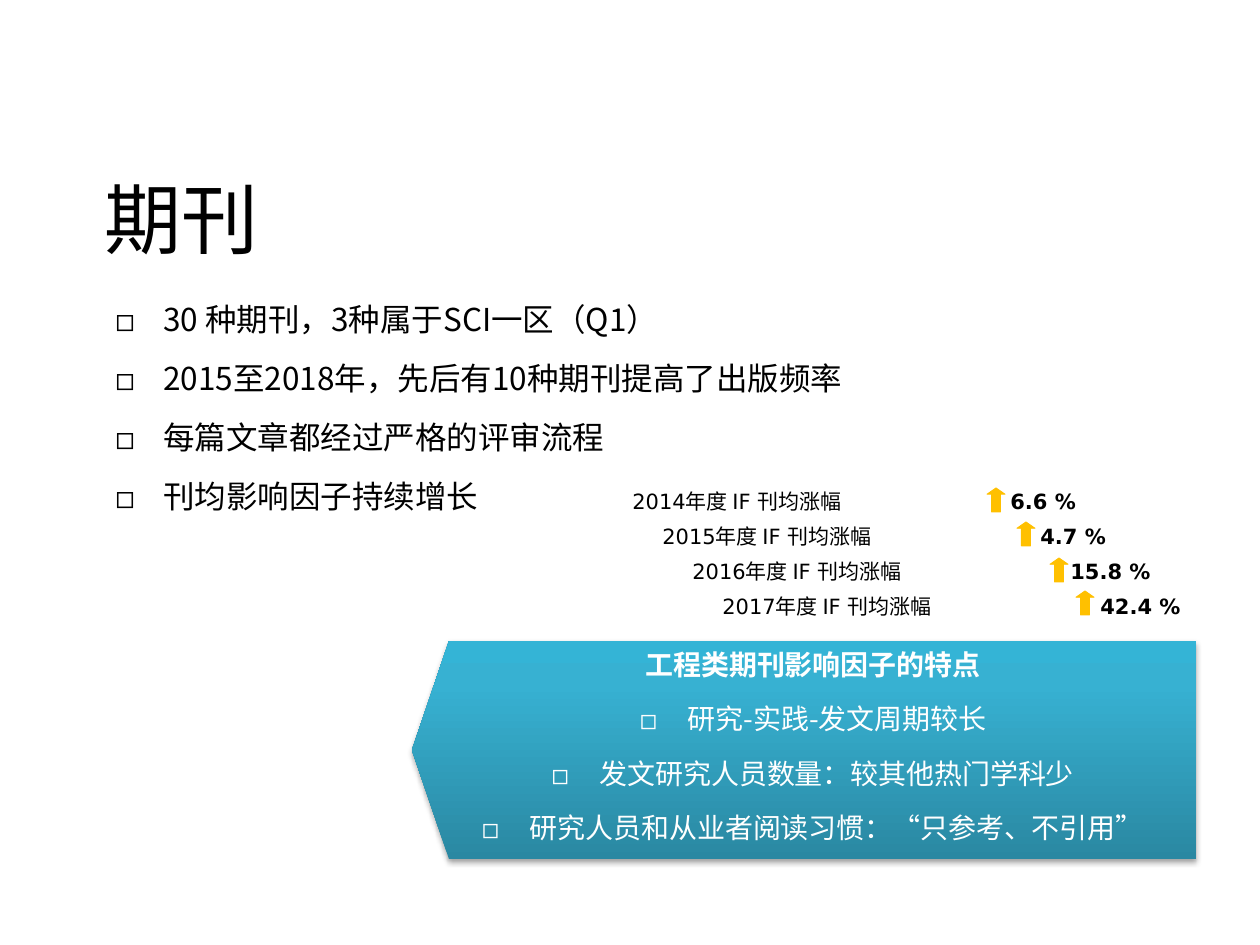
from lxml import etree
from pptx import Presentation
from pptx.dml.color import RGBColor
from pptx.enum.shapes import MSO_SHAPE
from pptx.enum.text import MSO_ANCHOR, PP_ALIGN
from pptx.oxml import parse_xml
from pptx.oxml.ns import qn
from pptx.util import Emu, Pt

PX = 914400 / 126
ARROW = MSO_SHAPE.UP_ARROW
PENTAGON = MSO_SHAPE.PENTAGON
MIDDLE = MSO_ANCHOR.MIDDLE
TOP = MSO_ANCHOR.TOP
CENTER = PP_ALIGN.CENTER
LEFT = PP_ALIGN.LEFT
DRAWING = "http://schemas.openxmlformats.org/drawingml/2006/main"
CHINESE = "Noto Sans CJK SC"
DIGITS = "DejaVu Sans"
COLORS = {
    "text": "000000",
    "light": "FFFFFF",
    "arrow": "FFC000",
    "deep": "2A88A2",
    "mid": "37B1D2",
    "bright": "34B4D6",
}

JOURNAL_FACTS = [
    "30 种期刊，3种属于SCI一区（Q1）",
    "2015至2018年，先后有10种期刊提高了出版频率",
    "每篇文章都经过严格的评审流程",
    "刊均影响因子持续增长",
]
GROWTH = [
    ("2014", "6.6 %", (367, 6)),
    ("2015", "4.7 %", (367, 5)),
    ("2016", "15.8 %", (370, 6)),
    ("2017", "42.4 %", (366, 4)),
]
GROWTH_TABS = (252, 378)
TRAITS_TITLE = "工程类期刊影响因子的特点"
TRAITS = [
    "研究-实践-发文周期较长",
    "发文研究人员数量：较其他热门学科少",
    "研究人员和从业者阅读习惯：“只参考、不引用”",
]


def px(*lengths):
    return [Emu(round(length * PX)) for length in lengths]


def color(name):
    return RGBColor.from_string(COLORS[name])


def add_span(para, text, size, font=CHINESE, ink="text", bold=False):
    span = para.add_run()
    span.text = text
    span.font.size = Pt(size)
    span.font.bold = bold
    span.font.color.rgb = color(ink)
    span.font.name = font
    latin = span.font._element.find(qn("a:latin"))
    east_asian = etree.Element(qn("a:ea"), typeface=font)
    latin.addnext(east_asian)


def add_text_box(page, box, anchor=TOP):
    frame = page.shapes.add_textbox(*px(*box)).text_frame
    frame.word_wrap = True
    frame.vertical_anchor = anchor
    return frame


def set_tabs(para, stops):
    tab_list = etree.SubElement(para._p.get_or_add_pPr(), qn("a:tabLst"))
    for stop in px(*stops):
        etree.SubElement(tab_list, qn("a:tab"), pos=str(stop), algn="l")


def fill_list(frame, items, size, ink, align, heading=None):
    lines = [(heading, False)] if heading else []
    lines += [(item, True) for item in items]
    for index, (text, bulleted) in enumerate(lines):
        para = frame.add_paragraph() if index else frame.paragraphs[0]
        para.alignment = align
        para.space_before = Pt(12 if index else 0)
        margin = px(48)[0]
        properties = para._p.get_or_add_pPr()
        properties.set("marL", str(margin))
        properties.set("indent", str(-margin))
        if bulleted:
            etree.SubElement(properties, qn("a:buFont"), typeface=CHINESE)
            etree.SubElement(properties, qn("a:buChar"), char="◻")
        add_span(para, text, size, ink=ink, bold=not bulleted)


def add_title(page, box):
    frame = add_text_box(page, box, MIDDLE)
    add_span(frame.paragraphs[0], "期刊", 44)


def add_facts(page, box):
    fill_list(add_text_box(page, box), JOURNAL_FACTS, 18, "text", LEFT)


def add_arrow(page, left, top):
    arrow = page.shapes.add_shape(ARROW, *px(left, top, 18, 24))
    arrow.adjustments[0] = 0.5
    arrow.adjustments[1] = 0.35
    arrow.shadow.inherit = False
    arrow.fill.solid()
    arrow.fill.fore_color.rgb = color("arrow")
    arrow.line.color.rgb = color("arrow")
    arrow.line.width = Pt(0.5)


def add_growth(page, box):
    left, top, width, height = box
    for index, (year, rise, (shift_x, shift_y)) in enumerate(GROWTH):
        row_left = left + 30 * index
        row_top = top + 35 * index
        frame = add_text_box(page, (row_left, row_top, width, height), MIDDLE)
        para = frame.paragraphs[0]
        set_tabs(para, GROWTH_TABS)
        add_span(para, year, 12, DIGITS)
        add_span(para, "年度 ", 12)
        add_span(para, "IF ", 12, DIGITS)
        add_span(para, "刊均涨幅\t\t", 12)
        add_span(para, rise, 12, DIGITS, bold=True)
        add_arrow(page, row_left + shift_x, row_top + shift_y)


def style_banner(banner):
    banner.line.fill.background()
    banner.shadow.inherit = False
    properties = banner._element.spPr
    properties.find(qn("a:xfrm")).set("flipH", "1")
    stops = "".join(
        f'<a:gs pos="{position * 1000}"><a:srgbClr val="{COLORS[name]}"/></a:gs>'
        for position, name in ((0, "deep"), (80, "mid"), (100, "bright"))
    )
    gradient = parse_xml(
        f'<a:gradFill xmlns:a="{DRAWING}" rotWithShape="1"><a:gsLst>{stops}</a:gsLst>'
        '<a:lin ang="16200000" scaled="0"/></a:gradFill>'
    )
    properties.find(qn("a:prstGeom")).addnext(gradient)
    shadow = parse_xml(
        f'<a:outerShdw xmlns:a="{DRAWING}" blurRad="{Pt(3.1)}" dist="{Pt(1.8)}" '
        f'dir="5400000" rotWithShape="0"><a:srgbClr val="{COLORS["text"]}">'
        '<a:alpha val="35000"/></a:srgbClr></a:outerShdw>'
    )
    properties.find(qn("a:effectLst")).append(shadow)


def add_traits(page, box):
    banner = page.shapes.add_shape(PENTAGON, *px(*box))
    banner.adjustments[0] = 0.17
    style_banner(banner)
    frame = banner.text_frame
    frame.word_wrap = True
    frame.vertical_anchor = TOP
    fill_list(frame, TRAITS, 16, "light", CENTER, TRAITS_TITLE)


def main():
    deck = Presentation()
    deck.slide_width, deck.slide_height = px(1260, 945)
    page = deck.slides.add_slide(deck.slide_layouts[6])
    add_title(page, (92, 151, 1090, 134))
    add_facts(page, (103, 294, 973, 306))
    add_growth(page, (620, 482, 520, 38))
    add_traits(page, (412, 641, 784, 218))
    deck.save("out.pptx")


if __name__ == "__main__":
    main()
